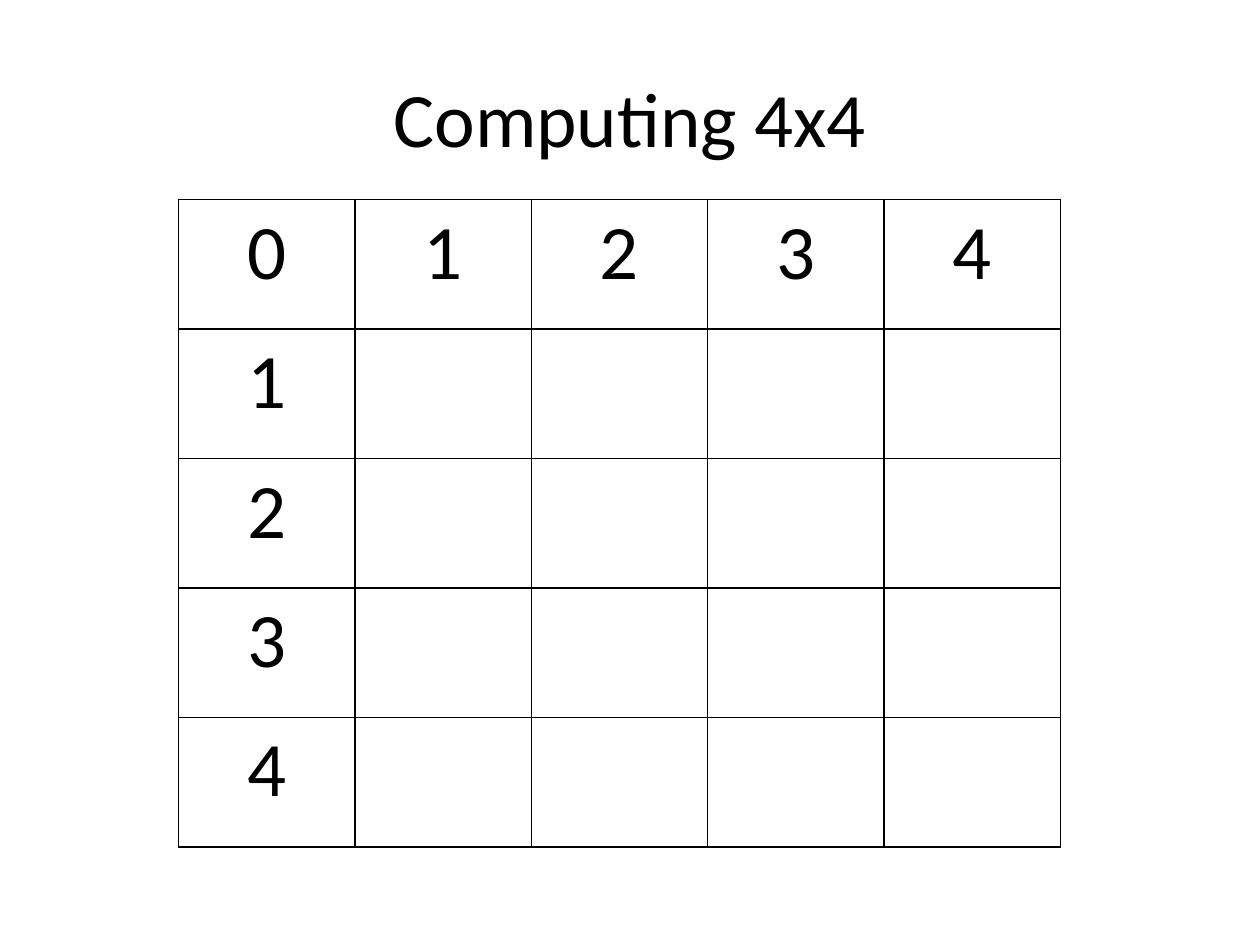
from dataclasses import dataclass

from lxml.etree import SubElement
from pptx import Presentation
from pptx.dml.color import RGBColor
from pptx.enum.text import MSO_ANCHOR, PP_ALIGN
from pptx.oxml.ns import qn
from pptx.util import Pt


@dataclass(frozen=True)
class Theme:
    font: str = "Calibri"
    ink: str = "000000"
    text_size: float = 44
    border_width: float = 1


@dataclass(frozen=True)
class Box:
    left: float
    top: float
    width: float
    height: float

    def in_points(self):
        return Pt(self.left), Pt(self.top), Pt(self.width), Pt(self.height)


THEME = Theme()
TITLE_BOX = Box(36, 21.6, 648, 90)
GRID_BOX = Box(102, 114, 504, 370)
FACTOR = 4


def write_centred(text_frame, text):
    text_frame.text = text
    paragraph = text_frame.paragraphs[0]
    paragraph.alignment = PP_ALIGN.CENTER
    for run in paragraph.runs:
        run.font.name = THEME.font
        run.font.size = Pt(THEME.text_size)
        run.font.color.rgb = RGBColor.from_string(THEME.ink)


def add_title(slide, box, text):
    title = slide.shapes.title
    title.left, title.top, title.width, title.height = box.in_points()
    title.text_frame.vertical_anchor = MSO_ANCHOR.MIDDLE
    write_centred(title.text_frame, text)


def outline_cell(cell):
    properties = cell._tc.get_or_add_tcPr()
    for position, side in enumerate(("a:lnL", "a:lnR", "a:lnT", "a:lnB")):
        line = SubElement(properties, qn(side), w=str(Pt(THEME.border_width)))
        fill = SubElement(line, qn("a:solidFill"))
        SubElement(fill, qn("a:srgbClr"), val=THEME.ink)
        properties.insert(position, line)  # borders must precede the cell fill


def add_product_grid(slide, box, factor):
    """Draw a multiplication grid with only its header row and column filled in."""
    count = factor + 1
    grid = slide.shapes.add_table(count, count, *box.in_points()).table
    grid.first_row = grid.horz_banding = False
    for column in grid.columns:
        column.width = Pt(box.width / count)
    for row in grid.rows:
        row.height = Pt(box.height / count)

    for row in range(count):
        for column in range(count):
            cell = grid.cell(row, column)
            cell.fill.background()
            outline_cell(cell)
            if row == 0 or column == 0:
                write_centred(cell.text_frame, str(row + column))


def main():
    deck = Presentation()
    deck.slide_width, deck.slide_height = Pt(720), Pt(540)
    title_only = deck.slide_layouts[5]
    slide = deck.slides.add_slide(title_only)
    add_title(slide, TITLE_BOX, f"Computing {FACTOR}x{FACTOR}")
    add_product_grid(slide, GRID_BOX, FACTOR)
    deck.save("out.pptx")


if __name__ == "__main__":
    main()
